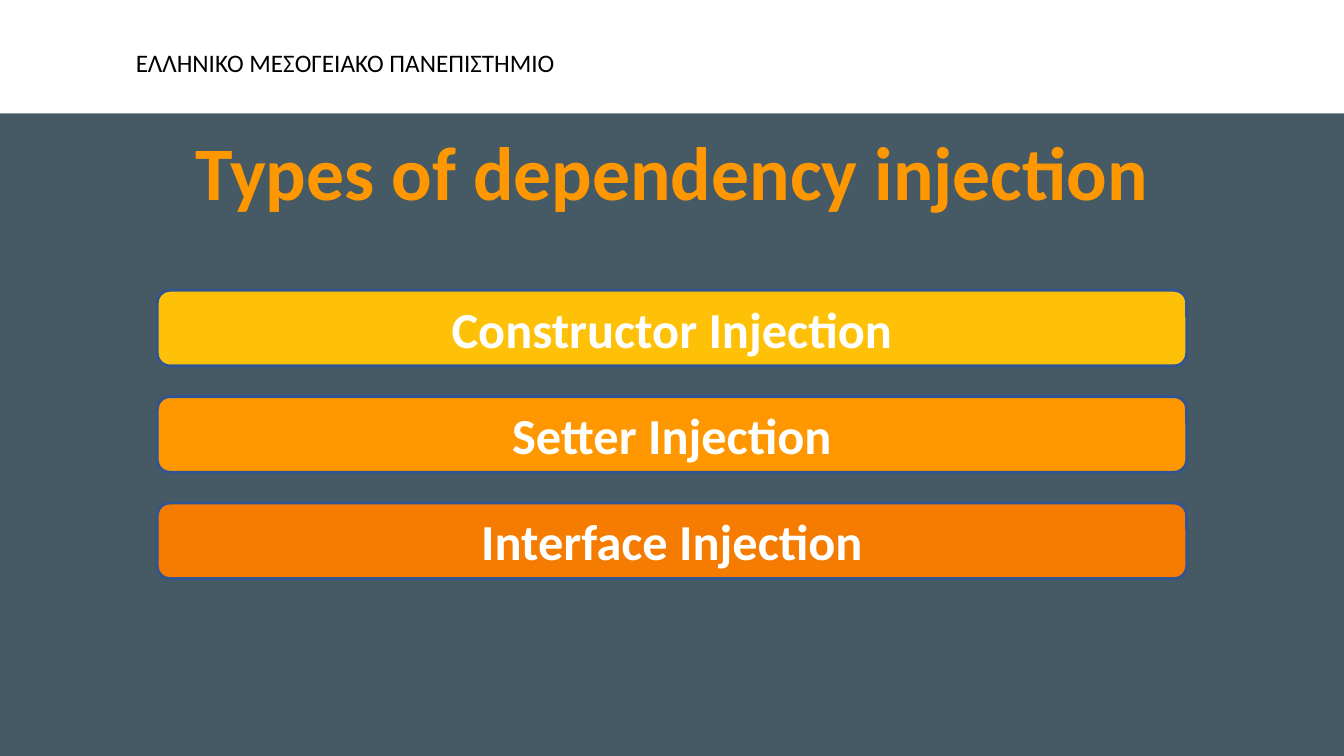
from dataclasses import dataclass

from pptx import Presentation
from pptx.dml.color import RGBColor
from pptx.enum.shapes import MSO_SHAPE
from pptx.enum.text import MSO_ANCHOR, PP_ALIGN
from pptx.slide import Slide
from pptx.text.text import TextFrame
from pptx.util import Inches, Pt

RECTANGLE = MSO_SHAPE.RECTANGLE
ROUNDED = MSO_SHAPE.ROUNDED_RECTANGLE
TOP, MIDDLE, BOTTOM = MSO_ANCHOR.TOP, MSO_ANCHOR.MIDDLE, MSO_ANCHOR.BOTTOM
LEFT, CENTER = PP_ALIGN.LEFT, PP_ALIGN.CENTER

SLIDE_WIDTH, SLIDE_HEIGHT = 13.33, 7.5


@dataclass(frozen=True)
class Theme:
    font: str = "Calibri"
    background: str = "455A64"
    white: str = "FFFFFF"
    black: str = "000000"
    amber: str = "FFC107"
    orange: str = "FF9800"
    dark_orange: str = "F57C00"
    outline: str = "325490"
    outline_width: float = 2
    university_size: float = 18
    title_size: float = 54
    injection_size: float = 36


@dataclass(frozen=True)
class Box:
    left: float
    top: float
    width: float
    height: float

    def emu(self) -> tuple[int, int, int, int]:
        return (Inches(self.left), Inches(self.top),
                Inches(self.width), Inches(self.height))


@dataclass(frozen=True)
class TextStyle:
    size: float
    color: str
    bold: bool = True
    align: PP_ALIGN = CENTER
    anchor: MSO_ANCHOR = MIDDLE
    line_spacing: float = 1.0
    inset: tuple[float, float] = (0.1, 0.05)


@dataclass(frozen=True)
class InjectionType:
    name: str
    color: str


THEME = Theme()
BANNER = Box(0, 0, SLIDE_WIDTH, SLIDE_HEIGHT * 0.15)
UNIVERSITY = Box(1.25, 0.42, 4.47, 0.4)
TITLE = Box((SLIDE_WIDTH - 10) / 2, 1.23, 10, 0.92)
FIRST_BAR = Box((SLIDE_WIDTH - 10.21) / 2, 2.88, 10.21, 0.75)
BAR_PITCH = 1.055
BAR_ROUNDING = 0.167

UNIVERSITY_STYLE = TextStyle(THEME.university_size, THEME.black,
                             bold=False, align=LEFT, anchor=TOP)
TITLE_STYLE = TextStyle(THEME.title_size, THEME.orange, anchor=BOTTOM,
                        line_spacing=0.9, inset=(0, 0))
INJECTION_STYLE = TextStyle(THEME.injection_size, THEME.white)

INJECTION_TYPES = (
    InjectionType("Constructor Injection", THEME.amber),
    InjectionType("Setter Injection", THEME.orange),
    InjectionType("Interface Injection", THEME.dark_orange),
)


def write(frame: TextFrame, text: str, style: TextStyle) -> None:
    frame.word_wrap = True
    frame.vertical_anchor = style.anchor
    frame.margin_left = frame.margin_right = Inches(style.inset[0])
    frame.margin_top = frame.margin_bottom = Inches(style.inset[1])
    paragraph = frame.paragraphs[0]
    paragraph.text = text
    paragraph.alignment = style.align
    paragraph.line_spacing = style.line_spacing
    paragraph.font.name = THEME.font
    paragraph.font.size = Pt(style.size)
    paragraph.font.bold = style.bold
    paragraph.font.color.rgb = RGBColor.from_string(style.color)


def add_text(slide: Slide, box: Box, text: str, style: TextStyle) -> None:
    write(slide.shapes.add_textbox(*box.emu()).text_frame, text, style)


def add_banner(slide: Slide) -> None:
    banner = slide.shapes.add_shape(RECTANGLE, *BANNER.emu())
    banner.shadow.inherit = False
    banner.fill.solid()
    banner.fill.fore_color.rgb = RGBColor.from_string(THEME.white)
    banner.line.fill.background()


def add_injection_bar(slide: Slide, row: int, injection: InjectionType) -> None:
    box = Box(FIRST_BAR.left, FIRST_BAR.top + row * BAR_PITCH,
              FIRST_BAR.width, FIRST_BAR.height)
    bar = slide.shapes.add_shape(ROUNDED, *box.emu())
    bar.adjustments[0] = BAR_ROUNDING
    bar.shadow.inherit = False
    bar.fill.solid()
    bar.fill.fore_color.rgb = RGBColor.from_string(injection.color)
    bar.line.color.rgb = RGBColor.from_string(THEME.outline)
    bar.line.width = Pt(THEME.outline_width)
    write(bar.text_frame, injection.name, INJECTION_STYLE)


def main() -> None:
    presentation = Presentation()
    presentation.slide_width = Inches(SLIDE_WIDTH)
    presentation.slide_height = Inches(SLIDE_HEIGHT)
    slide = presentation.slides.add_slide(presentation.slide_layouts[6])
    slide.background.fill.solid()
    slide.background.fill.fore_color.rgb = RGBColor.from_string(THEME.background)

    add_banner(slide)
    add_text(slide, UNIVERSITY, "ΕΛΛΗΝΙΚΟ ΜΕΣΟΓΕΙΑΚΟ ΠΑΝΕΠΙΣΤΗΜΙΟ", UNIVERSITY_STYLE)
    add_text(slide, TITLE, "Types of dependency injection", TITLE_STYLE)
    for row, injection in enumerate(INJECTION_TYPES):
        add_injection_bar(slide, row, injection)

    presentation.save("out.pptx")


if __name__ == "__main__":
    main()
